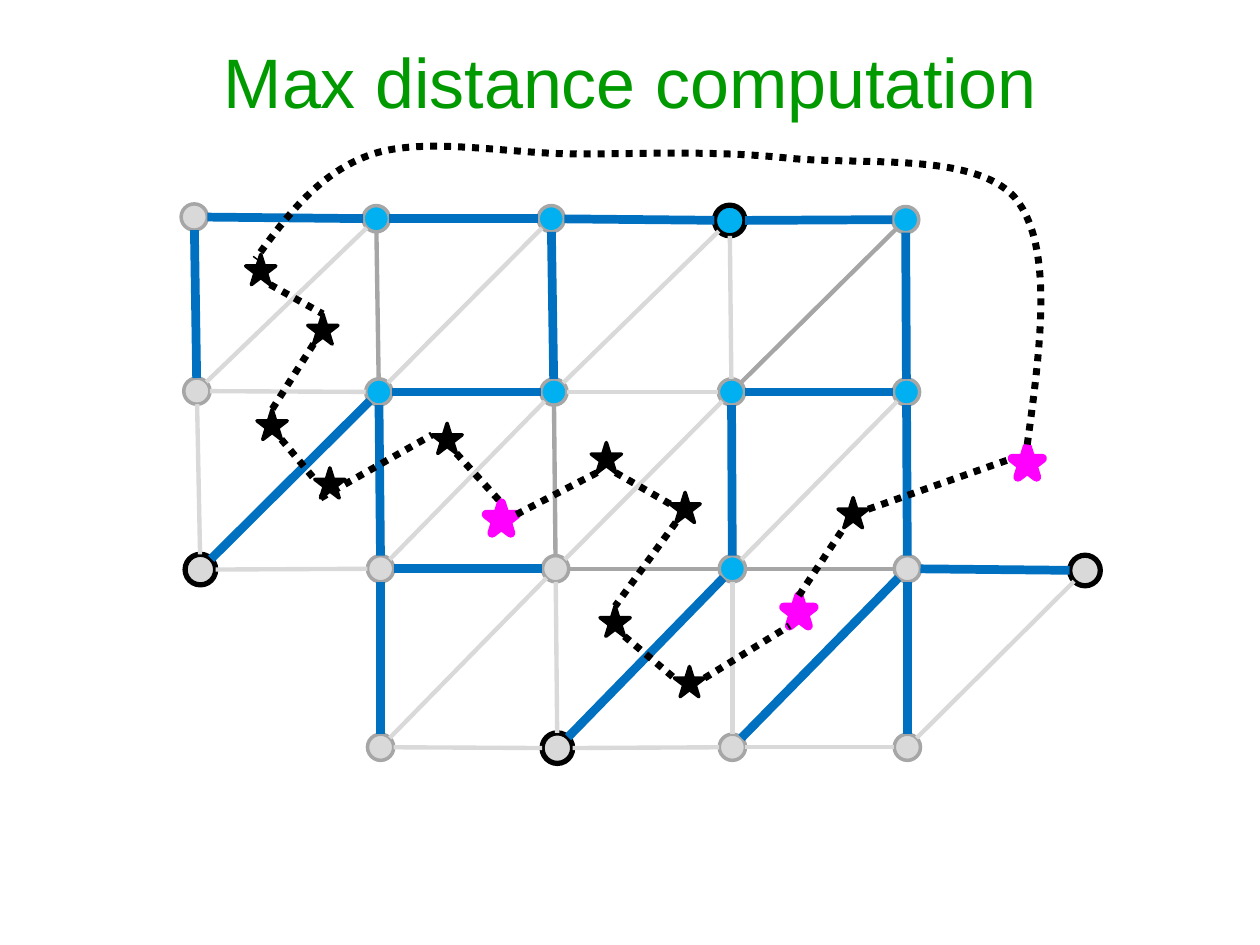
from itertools import pairwise
from math import hypot

from lxml import etree
from pptx import Presentation
from pptx import util as u
from pptx.dml.color import RGBColor
from pptx.enum import dml, shapes, text
from pptx.oxml.ns import qn

BLUE, CYAN, GREY, LIGHT = "0070C0", "00B0F0", "A6A6A6", "D9D9D9"
BLACK, PINK, GREEN = "000000", "FF00FF", "009900"

NODES = {
    "a0": (111, 124), "a1": (215, 125), "a2": (315, 125), "a3": (417, 126), "a4": (517.5, 125.5),
    "b0": (112.5, 223.5), "b1": (216.5, 224), "b2": (316.5, 224), "b3": (418, 224), "b4": (518, 224),
    "c0": (114.5, 325.5), "c1": (217.5, 325), "c2": (317.5, 325), "c3": (418.5, 325),
    "c4": (518.5, 325), "c5": (620, 326),
    "d1": (217.5, 427), "d2": (318.5, 427.5), "d3": (418.5, 427), "d4": (518.5, 427),
}
RINGED = {"a3", "c0", "c5", "d2"}
VISITED = {"a1", "a2", "a3", "a4", "b1", "b2", "b3", "b4", "c3"}

EDGES = [
    (LIGHT, 2.5, "b2b3 a3b2 a2b1 b0b1 a1b0 b4c3 b3c2 b2c1 c3d3 c2d2 c5d4 a3b3 "
                 "b0c0 c0c1 d3d4 d2d3 d1d2 c2d1"),
    (GREY, 2.5, "a1b1 b2c2 c2c3 c3c4 a4b3"),
    (BLUE, 5, "a0a1 a1a2 a2a3 a3a4 a0b0 a2b2 a4b4 b1b2 b3b4 b1c0 b1c1 b3c3 b4c4 "
              "c1c2 c4c5 c1d1 c3d2 c4d3 c4d4"),
]

STAR_SIZE = 17.25
STAR_TIPS = {"top": (0, -8.6), "left": (-8.6, -2), "right": (8.6, -2),
             "foot left": (-5.3, 8.6), "foot right": (5.3, 8.6)}

STARS = [
    (149, 154, BLACK, "top", "foot right"),
    (184.5, 188, BLACK, "top", "foot left"),
    (155.5, 242.5, BLACK, "top", "foot right"),
    (188.5, 276, BLACK, "left", "foot left"),
    (255.5, 250.5, BLACK, "left", "foot right"),
    (286.5, 296, PINK, "top", "right"),
    (346.5, 261.5, BLACK, "foot left", "foot right"),
    (391.5, 290, BLACK, "left", "foot left"),
    (351.5, 355, BLACK, "top", "foot right"),
    (394, 389.5, BLACK, "left", "right"),
    (456.5, 349, PINK, "foot left", "top"),
    (487.5, 293, BLACK, "foot left", "right"),
    (587, 264, PINK, "left", "top"),
]

RETURN_CURVE = [
    (587, 253.5), (595, 196.5), (602.5, 139.5), (579.5, 113), (556.5, 86), (489, 95),
    (447, 90.5), (405.5, 86.5), (368.5, 88.5), (330, 88), (291, 88), (244, 78),
    (213, 88), (183, 98), (164, 123), (145.5, 148.5),
]


def rgb(value):
    return RGBColor.from_string(value)


def style_line(line, color, width, dotted=False):
    line.color.rgb = rgb(color)
    line.width = u.Pt(width)
    if dotted:
        line.dash_style = dml.MSO_LINE.ROUND_DOT


def add_title(page, words):
    box = page.shapes.add_textbox(u.Pt(54), u.Pt(1), u.Pt(612), u.Pt(90))
    frame = box.text_frame
    frame.word_wrap = True
    frame.vertical_anchor = text.MSO_ANCHOR.MIDDLE
    frame.text = words
    para = frame.paragraphs[0]
    para.alignment = text.PP_ALIGN.CENTER
    span = para.runs[0]
    span.font.name = "Arial"
    span.font.size = u.Pt(40)
    span.font.color.rgb = rgb(GREEN)


def add_marker(page, kind, center, size, fill, line, width):
    x, y = center
    marker = page.shapes.add_shape(kind, u.Pt(x - size / 2), u.Pt(y - size / 2), u.Pt(size), u.Pt(size))
    marker.shadow.inherit = False
    marker.fill.solid()
    marker.fill.fore_color.rgb = rgb(fill)
    style_line(marker.line, line, width)


def add_line(page, start, end, color, width, dotted=False):
    ends = [u.Pt(value) for value in (*start, *end)]
    line = page.shapes.add_connector(shapes.MSO_CONNECTOR.STRAIGHT, *ends)
    style_line(line.line, color, width, dotted)
    etree.SubElement(line._element.spPr, qn("a:effectLst"))


def add_curve(page, points):
    builder = page.shapes.build_freeform(*points[0], scale=u.Pt(1))
    builder.add_line_segments(points[1:], close=False)
    curve = builder.convert_to_shape()
    curve.shadow.inherit = False
    curve.fill.background()
    style_line(curve.line, BLACK, 4, dotted=True)
    outline = next(curve._element.iter(qn("a:path")))
    segments = outline.findall(qn("a:lnTo"))
    for first in range(0, len(segments), 3):
        bezier = etree.SubElement(outline, qn("a:cubicBezTo"))
        for segment in segments[first:first + 3]:
            bezier.append(segment[0])
            outline.remove(segment)


def node_size(name):
    return 17.5 if name in RINGED else 15


def node_rim(name, toward):
    (x, y), (far_x, far_y) = NODES[name], NODES[toward]
    share = node_size(name) / 2 / hypot(far_x - x, far_y - y)
    return x + (far_x - x) * share, y + (far_y - y) * share


def star_tip(star, tip):
    dx, dy = STAR_TIPS[tip]
    return star[0] + dx, star[1] + dy


def add_mesh(page):
    for name, center in NODES.items():
        fill = CYAN if name in VISITED else LIGHT
        line, width = (BLACK, 3) if name in RINGED else (GREY, 2)
        add_marker(page, shapes.MSO_SHAPE.OVAL, center, node_size(name), fill, line, width)
    for color, width, pairs in EDGES:
        for pair in pairs.split():
            start, end = pair[:2], pair[2:]
            add_line(page, node_rim(start, end), node_rim(end, start), color, width)


def add_star_tour(page):
    for x, y, color, _, _ in STARS:
        width = 5.25 if color == PINK else 2
        add_marker(page, shapes.MSO_SHAPE.STAR_5_POINT, (x, y), STAR_SIZE, color, color, width)
    for star, following in pairwise(STARS):
        add_line(page, star_tip(star, star[4]), star_tip(following, following[3]), BLACK, 4, dotted=True)
    add_curve(page, RETURN_CURVE)


def main():
    deck = Presentation()
    deck.slide_width, deck.slide_height = u.Pt(720), u.Pt(540)
    page = deck.slides.add_slide(deck.slide_layouts[6])
    add_title(page, "Max distance computation")
    add_mesh(page)
    add_star_tour(page)
    deck.save("out.pptx")


if __name__ == "__main__":
    main()
